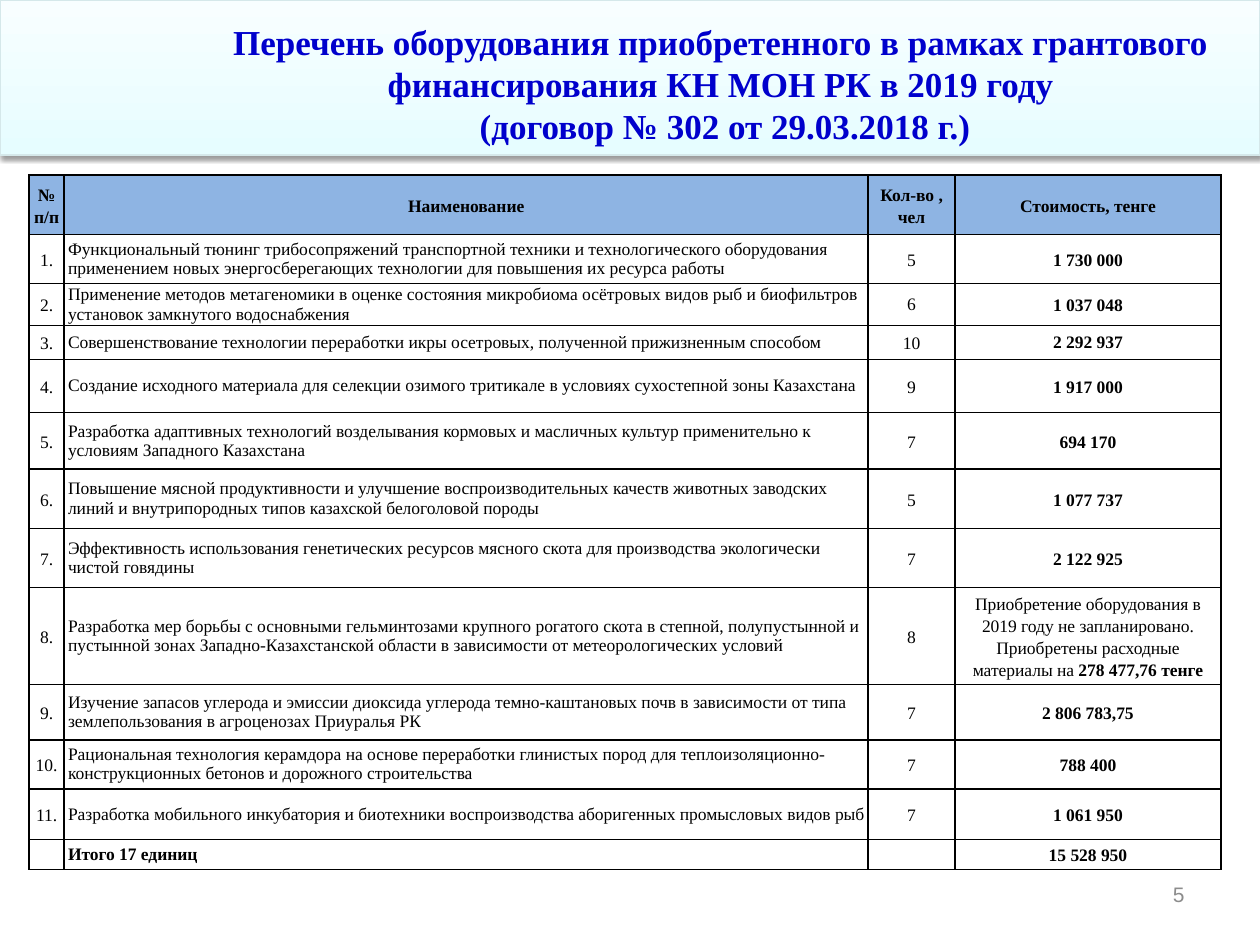
from pptx import Presentation
from pptx.dml.color import RGBColor
from pptx.enum.shapes import MSO_SHAPE
from pptx.enum.text import MSO_ANCHOR, PP_ALIGN
from pptx.oxml import parse_xml
from pptx.oxml.ns import nsdecls
from pptx.util import Inches, Pt

LEFT, CENTER, RIGHT = PP_ALIGN.LEFT, PP_ALIGN.CENTER, PP_ALIGN.RIGHT
TOP, MIDDLE = MSO_ANCHOR.TOP, MSO_ANCHOR.MIDDLE
RECTANGLE = MSO_SHAPE.RECTANGLE

WIDTH, HEIGHT = 10, 7.5
SERIF, SANS = "Times New Roman", "Arial"
BLACK, TITLE_BLUE, HEADER_BLUE, GREY = "000000", "0000CC", "8EB4E3", "8C8C8C"
COLUMN_WIDTHS = (0.28, 6.38, 0.69, 2.11)
HEADER_HEIGHT, TOTAL_HEIGHT = 0.47, 0.24
SINGLE_SPACED = {(2, 2), (3, 3)}

TITLE = [
    "Перечень оборудования приобретенного в рамках грантового финансирования КН МОН РК в 2019 году",
    " (договор № 302 от 29.03.2018 г.)",
]
HEADINGS = (["№ п/п"], ["Наименование"], ["Кол-во ,", "чел"], ["Стоимость, тенге"])
CONSUMABLES = (
    ("Приобретение оборудования в 2019 году не запланировано. Приобретены расходные материалы на ", False),
    ("278 477,76 тенге", True),
)
PROJECTS = (
    (0.39, "Функциональный тюнинг трибосопряжений транспортной техники и технологического оборудования "
     "применением новых энергосберегающих технологии для повышения их ресурса работы", "5", "1 730 000"),
    (0.33, "Применение методов метагеномики в оценке состояния микробиома осётровых видов рыб и биофильтров "
     "установок замкнутого водоснабжения", "6", "1 037 048"),
    (0.27, "Совершенствование технологии переработки икры осетровых, полученной прижизненным способом",
     "10", "2 292 937"),
    (0.42, "Создание исходного материала для селекции озимого тритикале в условиях сухостепной зоны Казахстана",
     "9", "1 917 000"),
    (0.45, "Разработка адаптивных технологий возделывания кормовых и масличных культур применительно к "
     "условиям Западного Казахстана", "7", "694 170"),
    (0.47, "Повышение мясной продуктивности и улучшение воспроизводительных качеств животных заводских "
     "линий и внутрипородных типов казахской белоголовой породы", "5", "1 077 737"),
    (0.47, "Эффективность использования генетических ресурсов мясного скота для производства экологически "
     "чистой говядины", "7", "2 122 925"),
    (0.77, "Разработка мер борьбы с основными гельминтозами крупного рогатого скота в степной, полупустынной и "
     "пустынной зонах Западно-Казахстанской области в зависимости от метеорологических условий",
     "8", CONSUMABLES),
    (0.44, "Изучение запасов углерода и эмиссии диоксида углерода темно-каштановых почв в зависимости от типа "
     "землепользования в агроценозах Приуралья РК", "7", "2 806 783,75"),
    (0.39, "Рациональная технология керамдора на основе переработки глинистых пород для теплоизоляционно-"
     "конструкционных бетонов и дорожного строительства", "7", "788 400"),
    (0.4, "Разработка мобильного инкубатория и биотехники воспроизводства аборигенных промысловых видов рыб",
     "7", "1 061 950"),
)
TOTAL = ("", "Итого 17 единиц", "", "15 528 950")


def color(hex_code):
    return RGBColor.from_string(hex_code)


def write(frame, paragraphs, size=10, font=SERIF, ink=BLACK, bold=False, align=CENTER, spacing=1.0):
    for index, content in enumerate(paragraphs):
        paragraph = frame.add_paragraph() if index else frame.paragraphs[0]
        paragraph.alignment = align
        paragraph.line_spacing = spacing
        paragraph.font.size = Pt(size)
        runs = ((content, bold),) if isinstance(content, str) else content
        for words, heavy in runs:
            if not words:
                paragraph.font.name = font
                continue
            run = paragraph.add_run()
            run.text = words
            run.font.size = Pt(size)
            run.font.name = font
            run.font.bold = heavy
            run.font.color.rgb = color(ink)


def add_text(slide, box, paragraphs, anchor=TOP, **style):
    frame = slide.shapes.add_textbox(*map(Inches, box)).text_frame
    frame.word_wrap = True
    frame.vertical_anchor = anchor
    write(frame, paragraphs, **style)


def add_banner(slide):
    banner = slide.shapes.add_shape(RECTANGLE, 0, 0, Inches(WIDTH), Inches(1.23))
    banner.fill.gradient()
    banner.fill.gradient_angle = 90
    for stop, shade in zip(banner.fill.gradient_stops, ("E6FDFF", "F8FEFF")):
        stop.color.rgb = color(shade)
    banner.line.color.rgb = color("D5E8EA")
    banner.line.width = Pt(0.75)
    banner.shadow.inherit = False
    effects = banner.fill._xPr.find("{*}effectLst")
    effects.append(parse_xml(
        f'<a:outerShdw {nsdecls("a")} blurRad="{Pt(3.1)}" dist="{Pt(1.6)}" dir="5400000" rotWithShape="0">'
        f'<a:srgbClr val="{BLACK}"><a:alpha val="38000"/></a:srgbClr></a:outerShdw>'))


def add_borders(cell):
    properties = cell._tc.get_or_add_tcPr()
    for side in "LRTB":
        properties.append(parse_xml(
            f'<a:ln{side} {nsdecls("a")} w="{Pt(1)}"><a:solidFill><a:srgbClr val="{BLACK}"/>'
            f'</a:solidFill></a:ln{side}>'))


def fill_cell(cell, paragraphs, shade=None, **style):
    cell.margin_left = cell.margin_right = Inches(0.03)
    cell.margin_top = cell.margin_bottom = 0
    cell.vertical_anchor = MIDDLE
    add_borders(cell)
    if shade:
        cell.fill.solid()
        cell.fill.fore_color.rgb = color(shade)
    else:
        cell.fill.background()
    write(cell.text_frame, paragraphs, **style)


def add_equipment_table(slide):
    heights = [HEADER_HEIGHT, *(project[0] for project in PROJECTS), TOTAL_HEIGHT]
    records = [(f"{number}.", *project[1:]) for number, project in enumerate(PROJECTS, 1)] + [TOTAL]
    box = (0.23, 1.39, sum(COLUMN_WIDTHS), sum(heights))
    table = slide.shapes.add_table(len(heights), len(COLUMN_WIDTHS), *map(Inches, box)).table
    table.first_row = table.horz_banding = False
    for column, width in zip(table.columns, COLUMN_WIDTHS):
        column.width = Inches(width)
    for row, height in zip(table.rows, heights):
        row.height = Inches(height)
    for column, heading in enumerate(HEADINGS):
        fill_cell(table.cell(0, column), heading, HEADER_BLUE, bold=True, spacing=1.15)
    for row, record in enumerate(records, 1):
        for column, content in enumerate(record):
            is_name = column == 1
            fill_cell(table.cell(row, column), [content],
                      bold=column == 3 or record is TOTAL,
                      align=LEFT if is_name else CENTER,
                      spacing=1.0 if is_name or (row, column) in SINGLE_SPACED else 1.15)


def main():
    deck = Presentation()
    deck.slide_width, deck.slide_height = Inches(WIDTH), Inches(HEIGHT)
    slide = deck.slides.add_slide(deck.slide_layouts[6])
    add_banner(slide)
    add_text(slide, (1.45, 0.13, 8.54, 1.06), TITLE, MIDDLE, size=20, ink=TITLE_BLUE, bold=True)
    add_equipment_table(slide)
    add_text(slide, (7.17, 6.95, 2.33, 0.4), ["5"], size=12, font=SANS, ink=GREY, align=RIGHT)
    deck.save("out.pptx")


if __name__ == "__main__":
    main()
